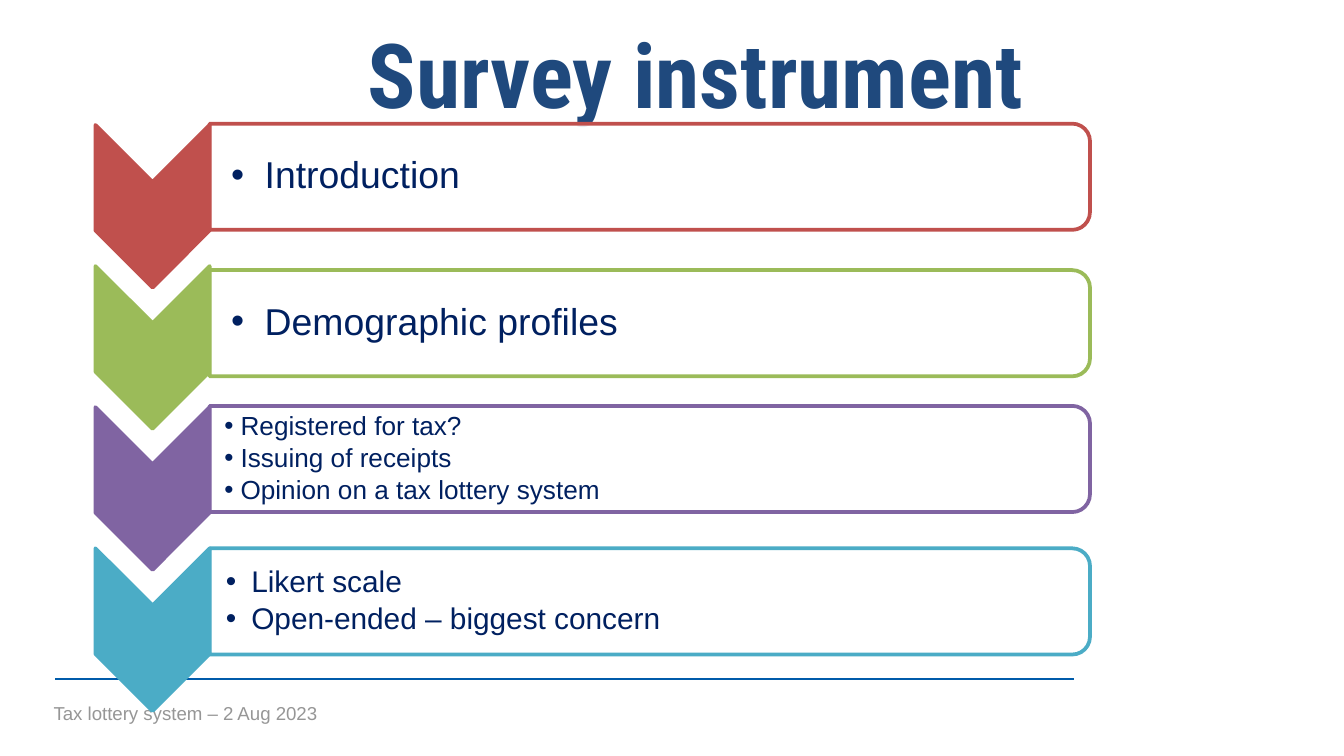
from lxml import etree
from pptx import Presentation
from pptx.dml.color import RGBColor
from pptx.enum.shapes import MSO_CONNECTOR, MSO_SHAPE
from pptx.enum.text import MSO_ANCHOR, PP_ALIGN
from pptx.oxml.ns import qn
from pptx.util import Inches, Pt

W = 10
H = W * 9 / 16
CHEVRON_TOP, CHEVRON_PITCH = 0.93, 1.05
CHEVRON_W, CHEVRON_H = 0.85, 1.21
CARD_W, CARD_H = 6.55, 0.79
LEFT = 0.71

# colour, card top, text size, left inset, bullet indent, items
STEPS = [
    ("C0504D", 0.92, 20, 0.16, 0.25, ["Introduction"]),
    ("9BBB59", 2.01, 20, 0.16, 0.25, ["Demographic profiles"]),
    ("8064A2", 3.02, 14, 0.11, 0.12, ["Registered for tax?", "Issuing of receipts",
                                      "Opinion on a tax lottery system"]),
    ("4BACC6", 4.08, 16, 0.12, 0.19, ["Likert scale", "Open-ended – biggest concern"]),
]


def rgb(value):
    return RGBColor.from_string(value)


def set_font(p, size, color, name="Arial", bold=False):
    for r in p.runs:
        r.font.size, r.font.name, r.font.bold = Pt(size), name, bold
        r.font.color.rgb = rgb(color)


def add_text(s, box, lines, insets, anchor=MSO_ANCHOR.TOP):
    tf = s.shapes.add_textbox(*map(Inches, box)).text_frame
    tf.word_wrap = True
    tf.vertical_anchor = anchor
    tf.margin_left, tf.margin_top, tf.margin_right, tf.margin_bottom = map(Inches, insets)
    tf.text = "\n".join(lines)
    return tf


def add_turned(s, kind, box, fill, line):
    """Add a shape turned a quarter clockwise so that it fills the box as seen."""
    x, y, w, h = box
    shift = (w - h) / 2
    sp = s.shapes.add_shape(kind, *map(Inches, (x + shift, y - shift, h, w)))
    sp.rotation = 90
    sp.shadow.inherit = False
    sp.fill.solid()
    sp.fill.fore_color.rgb = rgb(fill)
    sp.line.color.rgb = rgb(line)
    sp.line.width = Pt(2)
    return sp


def add_bullet(p, indent):
    pPr = p._p.get_or_add_pPr()
    pPr.set("marL", str(Inches(indent)))
    pPr.set("indent", str(-Inches(indent)))
    etree.SubElement(pPr, qn("a:buFont")).set("typeface", "Arial")
    etree.SubElement(pPr, qn("a:buChar")).set("char", "•")


def add_card(s, box, color, size, inset, indent, items):
    x, y, w, h = box
    card = add_turned(s, MSO_SHAPE.ROUND_2_SAME_RECTANGLE, box, "FFFFFF", color)
    white = card.fill._xPr.find(qn("a:solidFill"))[0]
    etree.SubElement(white, qn("a:alpha")).set("val", "90000")
    tf = add_text(s, (x, y + 0.04, w - 0.04, h - 0.08), items,
                  (inset, 0.01, 0.01, 0.01), MSO_ANCHOR.MIDDLE)
    for p in tf.paragraphs:
        add_bullet(p, indent)
        p.line_spacing = 0.9
        p.space_after = Pt(size * 0.15)
        set_font(p, size, "002060")


def add_steps(s, left, top):
    for i, (color, card_top, *content) in enumerate(STEPS):
        chevron = (left, top + i * CHEVRON_PITCH, CHEVRON_W, CHEVRON_H)
        add_turned(s, MSO_SHAPE.CHEVRON, chevron, color, color)
        add_card(s, (left + CHEVRON_W, card_top, CARD_W, CARD_H), color, *content)


def add_title(s, box):
    p = add_text(s, box, ["Survey instrument"], (0.05, 0.02, 0.05, 0.02)).paragraphs[0]
    p.alignment = PP_ALIGN.CENTER
    set_font(p, 48, "1F497D", "Roboto Condensed", True)


def add_footer(s, box):
    x, y, w, h = box
    ends = (x + 0.11, y - 0.12, x + w, y - 0.12)
    rule = s.shapes.add_connector(MSO_CONNECTOR.STRAIGHT, *map(Inches, ends))
    rule.line.color.rgb = rgb("005BAA")
    rule.line.width = Pt(1)
    etree.SubElement(rule._element.spPr, qn("a:effectLst"))
    tf = add_text(s, box, ["Tax lottery system – 2 Aug 2023"], (0.1, 0.05, 0.1, 0.05))
    set_font(tf.paragraphs[0], 10, "969696")


def main():
    prs = Presentation()
    prs.slide_width, prs.slide_height = Inches(W), Inches(H)
    s = prs.slides.add_slide(prs.slide_layouts[6])
    add_footer(s, (0.3, 5.17, 7.69, 0.27))
    add_title(s, (2.36, 0.12, 5.63, 0.86))
    add_steps(s, LEFT, CHEVRON_TOP)
    prs.save("out.pptx")


if __name__ == "__main__":
    main()
